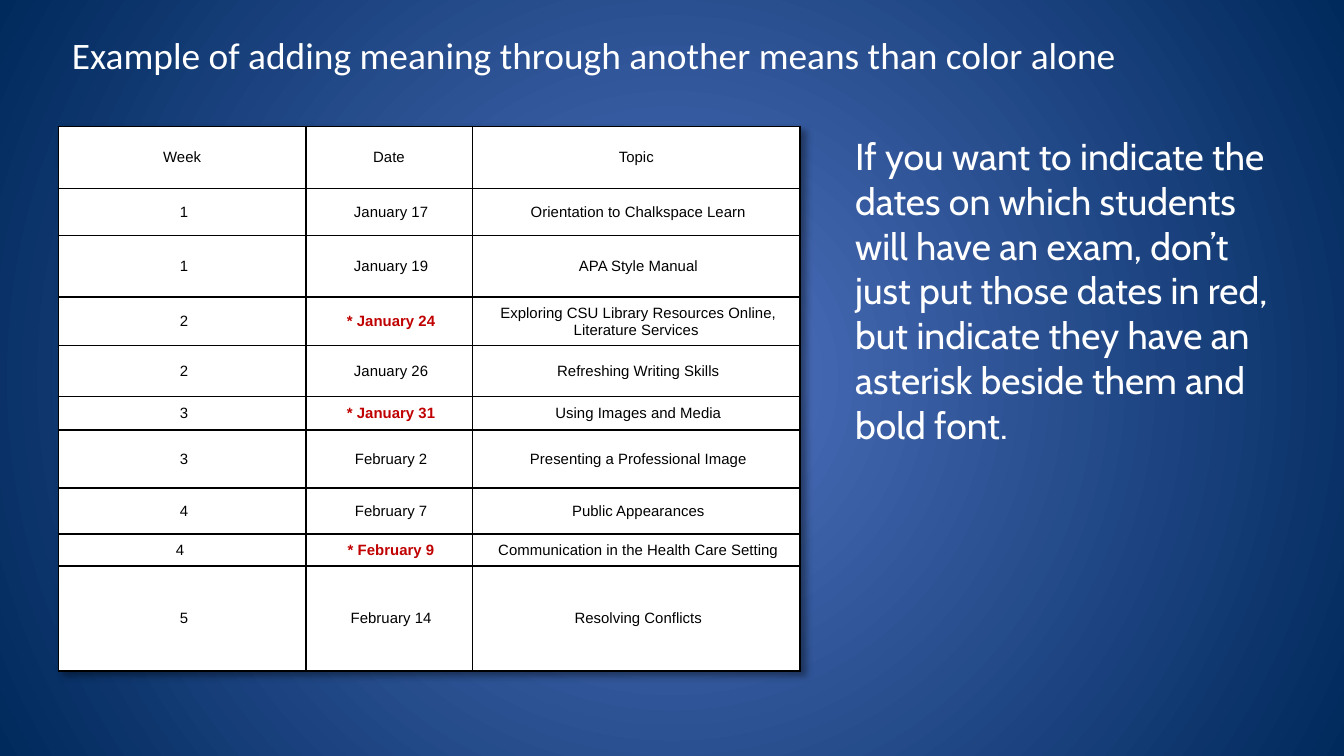
from lxml.etree import SubElement
from pptx import Presentation
from pptx.dml.color import RGBColor
from pptx.enum.text import MSO_ANCHOR as Anchor, MSO_AUTO_SIZE as AutoSize, PP_ALIGN as Align
from pptx.oxml import parse_xml
from pptx.oxml.ns import nsdecls, qn
from pptx.util import Inches, Pt

WIDTH = Inches(10)
HEIGHT = WIDTH * 9 // 16
WHITE, BLACK, EXAM_RED = "FFFFFF", "000000", "C00000"
NS = nsdecls("a")
HARD_SPACE = chr(160)

COLUMN_SHARES = [1.84, 1.24, 2.44]
ROW_SHARES = [0.46, 0.35, 0.46, 0.36, 0.38, 0.25, 0.43, 0.34, 0.24, 0.78]
HEADINGS = ["Week", "Date", "Topic"]
SCHEDULE = [
    ["1", "January 17", "Orientation to Chalkspace Learn"],
    ["1", "January 19", "APA Style Manual"],
    ["2", "* January 24", "Exploring CSU Library Resources Online, Literature Services"],
    ["2", "January 26", "Refreshing Writing Skills"],
    ["3", "* January 31", "Using Images and Media"],
    ["3", "February 2", "Presenting a Professional Image"],
    ["4", "February 7", "Public Appearances"],
    ["4" + HARD_SPACE, "* February 9", "Communication in the Health Care Setting"],
    ["5", "February 14", "Resolving Conflicts"],
]
ADVICE = (
    "If you want to indicate the dates on which students will have an exam, "
    "don’t just put those dates in red, but indicate they have an asterisk "
    "beside them and bold font."
)


def color(value):
    return RGBColor.from_string(value)


def share_box(left, top, width, height):
    return (int(WIDTH * left), int(HEIGHT * top),
            int(WIDTH * width), int(HEIGHT * height))


def pad(words):
    return words if words.endswith(HARD_SPACE) else HARD_SPACE + words


def add_run(paragraph, words, font, size, tint, bold=False):
    run = paragraph.add_run()
    run.text = words
    run.font.name, run.font.size, run.font.bold = font, Pt(size), bold
    run.font.color.rgb = color(tint)


def paint_background(slide):
    fill = slide.background.fill
    fill.gradient()
    for stop, tint in zip(fill.gradient_stops, ["5174C2", "00295C"]):
        stop.color.rgb = color(tint)
    gradient = slide.background._cSld.find(".//" + qn("a:gradFill"))
    gradient.remove(gradient.find(qn("a:lin")))
    glow = SubElement(gradient, qn("a:path"), path="circle")
    SubElement(glow, qn("a:fillToRect"), l="50000", t="50000", r="50000", b="50000")


def place_title(slide, box):
    title = slide.shapes.title
    title.left, title.top, title.width, title.height = box
    frame = title.text_frame
    frame.auto_size = AutoSize.NONE
    frame.vertical_anchor = Anchor.BOTTOM
    heading = frame.paragraphs[0]
    heading.alignment = Align.LEFT
    add_run(heading, "Example of adding meaning through another means than color alone",
            "Calibri", 20, WHITE)


def fill_cell(cell, words):
    cell.fill.solid()
    cell.fill.fore_color.rgb = color(WHITE)
    cell.vertical_anchor = Anchor.MIDDLE
    cell.margin_left = cell.margin_right = Inches(0.03)
    cell.margin_top = cell.margin_bottom = Inches(0.03)
    properties = cell._tc.get_or_add_tcPr()
    for position, side in enumerate(["lnL", "lnR", "lnT", "lnB"]):
        properties.insert(position, parse_xml(
            f'<a:{side} {NS} w="12700"><a:solidFill><a:srgbClr val="{BLACK}"/>'
            f'</a:solidFill></a:{side}>'))
    paragraph = cell.text_frame.paragraphs[0]
    paragraph.alignment = Align.CENTER
    is_exam = "*" in words
    add_run(paragraph, words, "Arial", 8, EXAM_RED if is_exam else BLACK, is_exam)


def place_schedule(slide, box):
    rows = [HEADINGS] + [[pad(words) for words in row] for row in SCHEDULE]
    schedule = slide.shapes.add_table(len(rows), len(HEADINGS), *box).table
    schedule.first_row = schedule.horz_banding = False
    schedule._tbl.tblPr.insert(0, parse_xml(
        f'<a:effectLst {NS}><a:outerShdw blurRad="50800" dist="38100" dir="2700000">'
        f'<a:srgbClr val="{BLACK}"><a:alpha val="40000"/></a:srgbClr>'
        '</a:outerShdw></a:effectLst>'))
    for column, share in zip(schedule.columns, COLUMN_SHARES):
        column.width = int(box[2] * share / sum(COLUMN_SHARES))
    for row, share, entries in zip(schedule.rows, ROW_SHARES, rows):
        row.height = int(box[3] * share / sum(ROW_SHARES))
        for cell, words in zip(row.cells, entries):
            fill_cell(cell, words)


def place_advice(slide, box):
    frame = slide.shapes.add_textbox(*box).text_frame
    frame.word_wrap = True
    frame.auto_size = AutoSize.SHAPE_TO_FIT_TEXT
    add_run(frame.paragraphs[0], ADVICE, "Cabin", 20, WHITE)


def main():
    deck = Presentation()
    deck.slide_width, deck.slide_height = WIDTH, HEIGHT
    slide = deck.slides.add_slide(deck.slide_layouts.get_by_name("Title Only"))
    paint_background(slide)
    place_title(slide, share_box(0.0435, 0.03, 0.874, 0.081))
    place_schedule(slide, share_box(0.0435, 0.1675, 0.552, 0.72))
    place_advice(slide, share_box(0.6265, 0.1675, 0.343, 0.438))
    deck.save("out.pptx")


if __name__ == "__main__":
    main()
